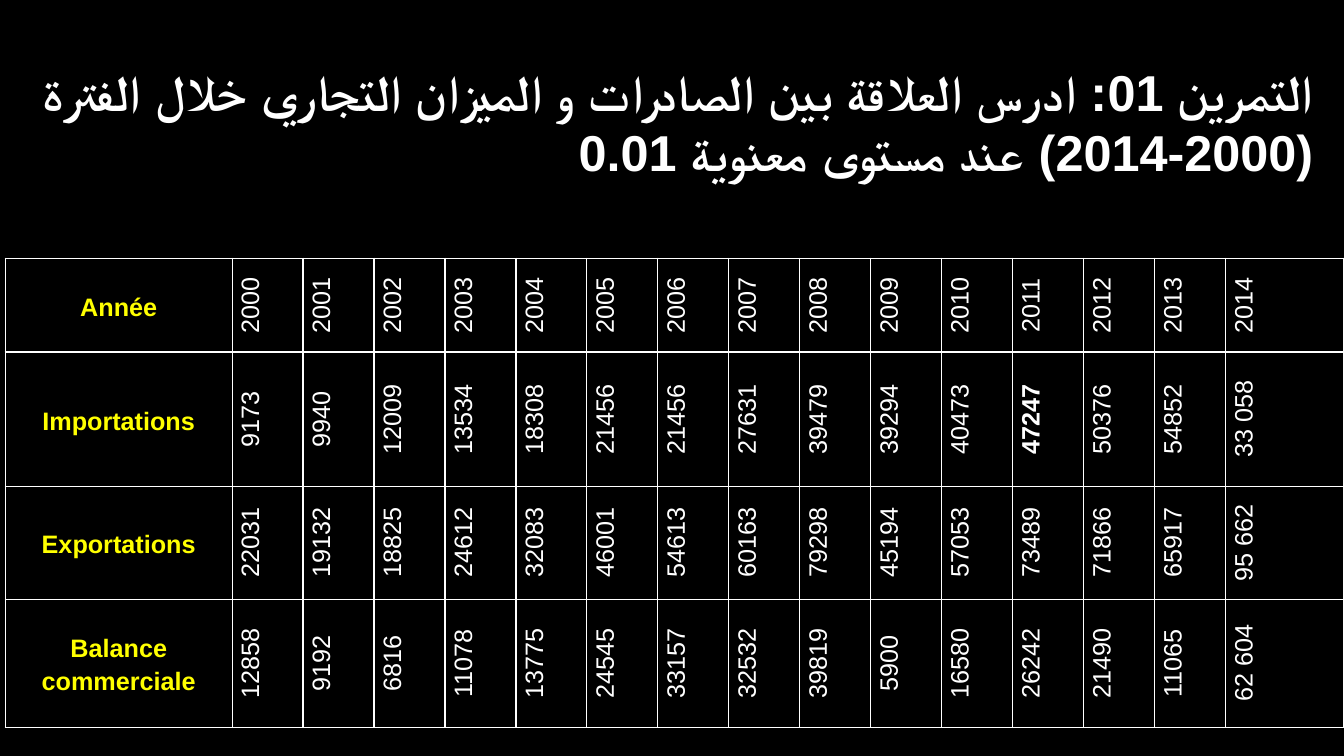
from lxml import etree
from pptx import Presentation
from pptx.dml.color import RGBColor
from pptx.enum import text
from pptx.oxml import ns
from pptx.util import Pt

COLORS = {"background": "000000", "white": "FFFFFF", "label": "FFFF00"}
TITLE = ("التمرين 01: ادرس العلاقة بين الصادرات و الميزان التجاري "
         "خلال الفترة (2000-2014) عند مستوى معنوية 0.01")
TRADE = {
    "Année": [str(year) for year in range(2000, 2015)],
    "Importations": ["9173", "9940", "12009", "13534", "18308", "21456", "21456", "27631",
                     "39479", "39294", "40473", "47247", "50376", "54852", "33 058"],
    "Exportations": ["22031", "19132", "18825", "24612", "32083", "46001", "54613", "60163",
                     "79298", "45194", "57053", "73489", "71866", "65917", "95 662"],
    "Balance commerciale": ["12858", "9192", "6816", "11078", "13775", "24545", "33157", "32532",
                            "39819", "5900", "16580", "26242", "21490", "11065", "62 604"],
}
BOLD_VALUE = "47247"
RTL_LABELS = ("Année", "Balance commerciale")
COLUMN_WIDTHS = [162] + [50.7] * 14 + [84.2]
ROW_HEIGHTS = [67, 96, 80.5, 91.5]


def color(name):
    return RGBColor.from_string(COLORS[name])


def add_span(para, words, font, size, color_name, bold):
    span = para.add_run()
    span.text = words
    span.font.name = font
    span.font.size = Pt(size)
    span.font.bold = bold
    span.font.color.rgb = color(color_name)
    return span


def set_right_to_left(para):
    para._p.get_or_add_pPr().set("rtl", "1")


def add_title(page):
    title = page.shapes.title
    title.left, title.top, title.width, title.height = Pt(10.8), Pt(39.6), Pt(934.5), Pt(94.5)
    frame = title.text_frame
    frame.word_wrap = True
    frame.auto_size = text.MSO_AUTO_SIZE.SHAPE_TO_FIT_TEXT
    frame.vertical_anchor = text.MSO_ANCHOR.MIDDLE
    para = frame.paragraphs[0]
    para.alignment = text.PP_ALIGN.RIGHT
    set_right_to_left(para)
    span = add_span(para, TITLE, "Calibri", 36, "white", True)
    script_font = etree.SubElement(span.font._element, ns.qn("a:cs"))
    script_font.set("typeface", "Arial")


def draw_borders(cell):
    properties = cell._tc.get_or_add_tcPr()
    for side in ("L", "R", "T", "B"):
        line = etree.SubElement(properties, ns.qn(f"a:ln{side}"), w=str(Pt(1)))
        fill = etree.SubElement(line, ns.qn("a:solidFill"))
        etree.SubElement(fill, ns.qn("a:srgbClr"), val=COLORS["white"])


def fill_cell(cell, words, is_label):
    draw_borders(cell)
    cell.fill.background()
    cell.margin_left = cell.margin_right = Pt(3.6)
    cell.margin_top = cell.margin_bottom = 0
    cell.vertical_anchor = text.MSO_ANCHOR.MIDDLE
    if not is_label:
        cell._tc.get_or_add_tcPr().set("vert", "vert270")
    para = cell.text_frame.paragraphs[0]
    para.alignment = text.PP_ALIGN.CENTER
    para.line_spacing = 1.15
    if words in RTL_LABELS:
        set_right_to_left(para)
    add_span(para, words, "Arial", 18, "label" if is_label else "white",
             is_label or words == BOLD_VALUE)


def add_trade_table(page):
    frame = page.shapes.add_table(len(ROW_HEIGHTS), len(COLUMN_WIDTHS), Pt(3.8), Pt(184.5),
                                  Pt(sum(COLUMN_WIDTHS)), Pt(sum(ROW_HEIGHTS)))
    table = frame.table
    table.first_row = table.horz_banding = False
    for column, width in zip(table.columns, COLUMN_WIDTHS):
        column.width = Pt(width)
    for row, height, (label, values) in zip(table.rows, ROW_HEIGHTS, TRADE.items()):
        row.height = Pt(height)
        for index, (cell, words) in enumerate(zip(row.cells, [label] + values)):
            fill_cell(cell, words, index == 0)


def main():
    deck = Presentation()
    deck.slide_width, deck.slide_height = Pt(960), Pt(540)
    page = deck.slides.add_slide(deck.slide_layouts[5])
    page.background.fill.solid()
    page.background.fill.fore_color.rgb = color("background")
    add_title(page)
    add_trade_table(page)
    deck.save("out.pptx")


if __name__ == "__main__":
    main()
